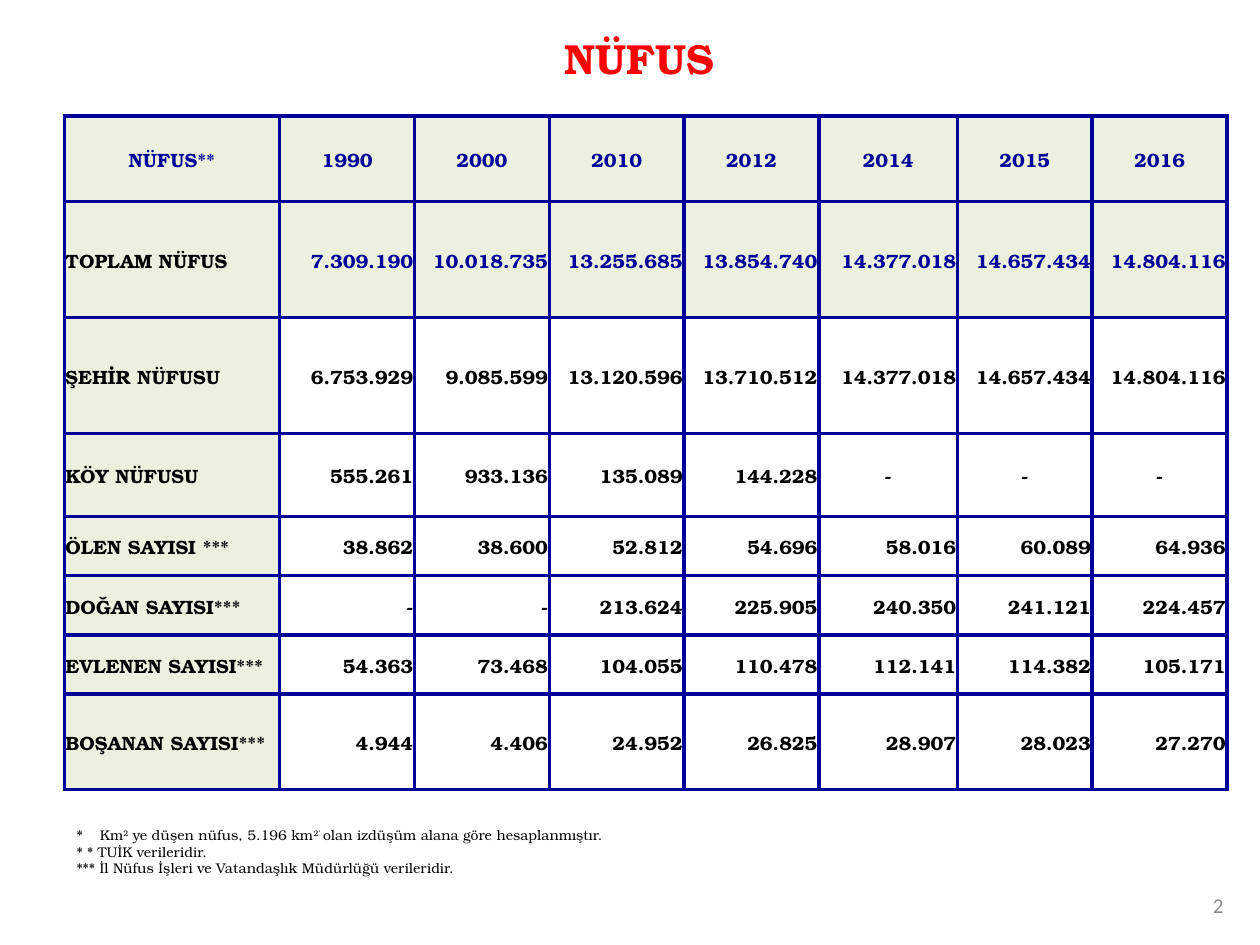
import pptx
import pptx.util
import pptx.dml.color
import pptx.enum.text
import pptx.oxml.ns
import lxml.etree

ALIGN = pptx.enum.text.PP_ALIGN
MID = pptx.enum.text.MSO_ANCHOR.MIDDLE
NAVY, PALE, WHITE, BLACK = "000099", "EBF1DE", "FFFFFF", "000000"

HEAD = ["NÜFUS**", "1990", "2000", "2010", "2012", "2014", "2015", "2016"]
BODY = [
    ["TOPLAM NÜFUS", "7.309.190", "10.018.735", "13.255.685", "13.854.740",
     "14.377.018", "14.657.434", "14.804.116"],
    ["ŞEHİR NÜFUSU", "6.753.929", "9.085.599", "13.120.596", "13.710.512",
     "14.377.018", "14.657.434", "14.804.116"],
    ["KÖY NÜFUSU", "555.261", "933.136", "135.089", "144.228", "-", "-", "-"],
    ["ÖLEN SAYISI ***", "38.862", "38.600", "52.812", "54.696",
     "58.016", "60.089", "64.936"],
    ["DOĞAN SAYISI***", "-", "-", "213.624", "225.905",
     "240.350", "241.121", "224.457"],
    ["EVLENEN SAYISI***", "54.363", "73.468", "104.055", "110.478",
     "112.141", "114.382", "105.171"],
    ["BOŞANAN SAYISI***", "4.944", "4.406", "24.952", "26.825",
     "28.907", "28.023", "27.270"],
]
# Odd pieces between carets are raised
NOTES = [
    "*\tKm^2^ ye düşen nüfus, 5.196 km^2’ ^olan izdüşüm alana göre hesaplanmıştır.",
    "* * TUİK verileridir.",
    "*** İl Nüfus İşleri ve Vatandaşlık Müdürlüğü verileridir.",
]


def tint(code):
    return pptx.dml.color.RGBColor.from_string(code)


def sub(node, tag, **attrs):
    return lxml.etree.SubElement(node, pptx.oxml.ns.qn(tag), attrs)


class Deck:
    """Style and current slide; lengths are units of a 100 by 75 grid."""
    font = "TeX Gyre Bonum"
    edge = 2.25

    def __init__(self):
        self.file = pptx.Presentation()
        self.file.slide_width = pptx.util.Inches(10)
        self.file.slide_height = pptx.util.Inches(7.5)
        self.slide = self.file.slides.add_slide(self.file.slide_layouts[6])

    def unit(self, count):
        return round(self.file.slide_width * count / 100)

    def style(self, para, size, color, bold, align, font=None):
        para.alignment = align
        for run in para.runs:
            run.font.name = font or self.font
            run.font.size = pptx.util.Pt(size)
            run.font.bold = bold
            run.font.color.rgb = tint(color)

    def text(self, box, lines, size, color, bold=False, align=ALIGN.LEFT,
             font=None, anchor=None, tab=None):
        frame = self.slide.shapes.add_textbox(*map(self.unit, box)).text_frame
        frame.word_wrap = True
        frame.vertical_anchor = anchor
        for i, line in enumerate(lines):
            para = frame.add_paragraph() if i else frame.paragraphs[0]
            for j, part in enumerate(line.split("^")):
                run = para.add_run()
                run.text = part
                if j % 2:
                    run.font._element.set("baseline", "30000")
            self.style(para, size, color, bold, align, font)
            if tab:
                stops = sub(para._p.get_or_add_pPr(), "a:tabLst")
                sub(stops, "a:tab", pos=str(self.unit(tab)), algn="l")

    def cell(self, cell, text, fill, color, align):
        cell.text_frame.text = text
        self.style(cell.text_frame.paragraphs[0], 11, color, True, align)
        cell.vertical_anchor = MID
        cell.margin_left = cell.margin_right = cell.margin_top = self.unit(0.1)
        cell.margin_bottom = 0
        cell.fill.solid()
        cell.fill.fore_color.rgb = tint(fill)
        # Borders go before the fill
        props = cell._tc.get_or_add_tcPr()
        for i, side in enumerate(("a:lnL", "a:lnR", "a:lnT", "a:lnB")):
            line = sub(props, side, w=str(pptx.util.Pt(self.edge)))
            sub(sub(line, "a:solidFill"), "a:srgbClr", val=NAVY)
            props.insert(i, line)

    def table(self, left, top, wides, highs, rows):
        box = map(self.unit, (left, top, sum(wides), sum(highs)))
        grid = self.slide.shapes.add_table(len(highs), len(wides), *box).table
        grid.first_row = grid.horz_banding = False
        for col, wide in zip(grid.columns, wides):
            col.width = self.unit(wide)
        for row, high in zip(grid.rows, highs):
            row.height = self.unit(high)
        for r, row in enumerate(rows):
            for c, text in enumerate(row):
                fill = PALE if r < 2 or c == 0 else WHITE
                color = NAVY if r == 0 or (r == 1 and c) else BLACK
                if r == 0 or (r == 3 and text == "-"):
                    align = ALIGN.CENTER
                else:
                    align = ALIGN.RIGHT if c else ALIGN.JUSTIFY
                self.cell(grid.cell(r, c), text, fill, color, align)


def main():
    deck = Deck()
    # Page number
    deck.text((92.5, 69.8, 5.6, 4), ["2"], 12, "8C8C8C", align=ALIGN.RIGHT,
              font="Calibri", anchor=MID)
    # Population table
    wides = [17.1] + [10.7] * 4 + [11] + [10.7] * 2
    highs = [6.8, 9.2, 9.2, 6.6, 4.7, 4.7, 4.7, 7.6]
    deck.table(5.1, 9.2, wides, highs, [HEAD] + BODY)
    # Title and footnotes
    deck.text((5.1, 2.1, 91.3, 5), ["NÜFUS"], 24, "FF0000", True, ALIGN.CENTER)
    deck.text((5.1, 65.1, 91, 5), NOTES, 8, BLACK, tab=1.85)
    deck.file.save("out.pptx")


if __name__ == "__main__":
    main()
